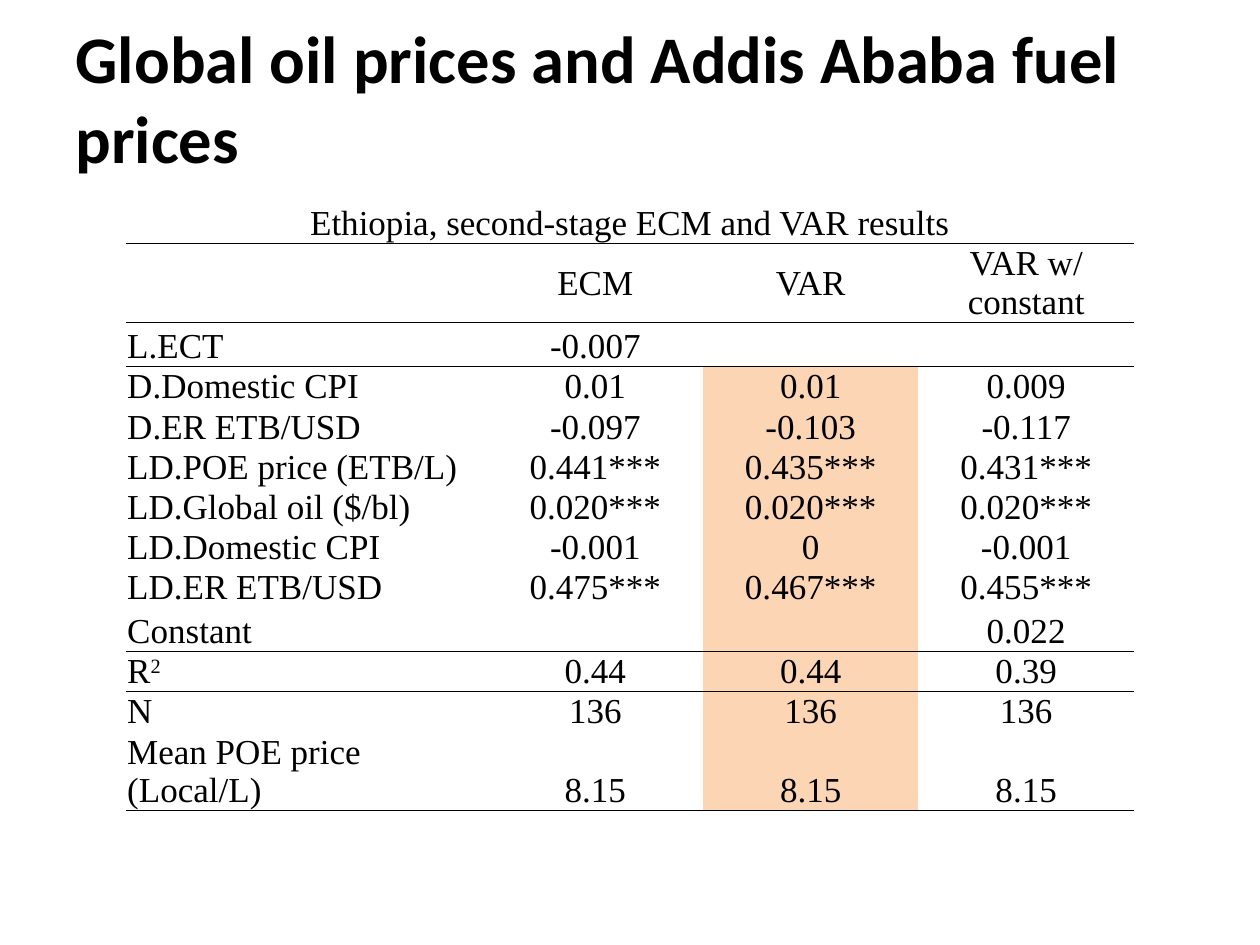
from pptx import Presentation
from pptx import util as u
from pptx.dml.color import RGBColor
from pptx.enum import text as t
from pptx.oxml import parse_xml
from pptx.oxml.ns import nsdecls, qn

TITLE = "Global oil prices and Addis Ababa fuel prices"
CAPTION = "Ethiopia, second-stage ECM and VAR results"
ROWS = [
    (CAPTION, "", "", ""),
    ("", "ECM", "VAR", "VAR w/ constant"),
    ("L.ECT", "-0.007", "", ""),
    ("D.Domestic CPI", "0.01", "0.01", "0.009"),
    ("D.ER ETB/USD", "-0.097", "-0.103", "-0.117"),
    ("LD.POE price (ETB/L)", "0.441***", "0.435***", "0.431***"),
    ("LD.Global oil ($/bl)", "0.020***", "0.020***", "0.020***"),
    ("LD.Domestic CPI", "-0.001", "0", "-0.001"),
    ("LD.ER ETB/USD", "0.475***", "0.467***", "0.455***"),
    ("Constant", "", "", "0.022"),
    ("R^2", "0.44", "0.44", "0.39"),
    ("N", "136", "136", "136"),
    ("Mean POE price (Local/L)", "8.15", "8.15", "8.15"),
]
COL_WIDTHS = (2.87, 1.71, 1.71, 1.71)
CAPTION_HEIGHT, ROW_HEIGHT = 0.35, 0.3
RULED_ROWS = {0, 1, 9, 12}
HEADER_ROW, FIRST_SHADED_ROW, SHADED_COL = 1, 3, 2
NO_STYLE = "{2D5ABB26-0587-4C30-8999-92F81FD0307C}"

BLACK = RGBColor(0x00, 0x00, 0x00)
PEACH = RGBColor(0xFC, 0xD5, 0xB5)


def put_text(tf, text, size=20, font="Times New Roman", bold=False,
             align=t.PP_ALIGN.LEFT):
    p = tf.paragraphs[0]
    p.alignment = align
    p.font.size = u.Pt(size)
    for i, part in enumerate(text.split("^")):
        if not part:
            continue
        r = p.add_run()
        r.text = part
        r.font.size = u.Pt(size)
        r.font.name = font
        r.font.bold = bold
        r.font.color.rgb = BLACK
        if i:
            r.font._element.set("baseline", "30000")


def add_rule(cell, side):
    cell._tc.get_or_add_tcPr().append(parse_xml(
        f'<a:{side} {nsdecls("a")} w="{u.Pt(0.5)}"><a:solidFill>'
        f'<a:srgbClr val="{BLACK}"/></a:solidFill></a:{side}>'))


def format_cell(cell, row, col, text):
    cell.margin_left = cell.margin_right = cell.margin_top = u.Inches(0.01)
    cell.margin_bottom = 0
    header = row == HEADER_ROW
    cell.vertical_anchor = t.MSO_ANCHOR.MIDDLE if header else t.MSO_ANCHOR.BOTTOM
    centred = col > 0 or row == 0
    put_text(cell.text_frame, text,
             align=t.PP_ALIGN.CENTER if centred else t.PP_ALIGN.LEFT)
    if row - 1 in RULED_ROWS:
        add_rule(cell, "lnT")
    if row in RULED_ROWS:
        add_rule(cell, "lnB")
    if col == SHADED_COL and row >= FIRST_SHADED_ROW:
        cell.fill.solid()
        cell.fill.fore_color.rgb = PEACH
    else:
        cell.fill.background()


def add_results(s):
    frame = s.shapes.add_table(
        len(ROWS), len(COL_WIDTHS), u.Inches(1), u.Inches(1.58),
        u.Inches(sum(COL_WIDTHS)),
        u.Inches(CAPTION_HEIGHT + ROW_HEIGHT * (len(ROWS) - 1)))
    table = frame.table
    table.first_row = table.horz_banding = False
    next(frame._element.iter(qn("a:tableStyleId"))).text = NO_STYLE
    for col, width in zip(table.columns, COL_WIDTHS):
        col.width = u.Inches(width)
    for i, values in enumerate(ROWS):
        table.rows[i].height = u.Inches(ROW_HEIGHT if i else CAPTION_HEIGHT)
        for j, value in enumerate(values):
            format_cell(table.cell(i, j), i, j, value)
    table.cell(0, 0).merge(table.cell(0, len(COL_WIDTHS) - 1))


def main():
    prs = Presentation()
    prs.slide_width, prs.slide_height = u.Inches(10), u.Inches(7.5)
    s = prs.slides.add_slide(prs.slide_layouts[5])
    title = s.shapes.title
    title.left, title.top = u.Inches(0.5), u.Inches(0.17)
    title.width, title.height = u.Inches(9.5), u.Inches(1.2)
    title.text_frame.vertical_anchor = t.MSO_ANCHOR.MIDDLE
    put_text(title.text_frame, TITLE, size=38, font="Calibri", bold=True)
    add_results(s)
    prs.save("out.pptx")


if __name__ == "__main__":
    main()
